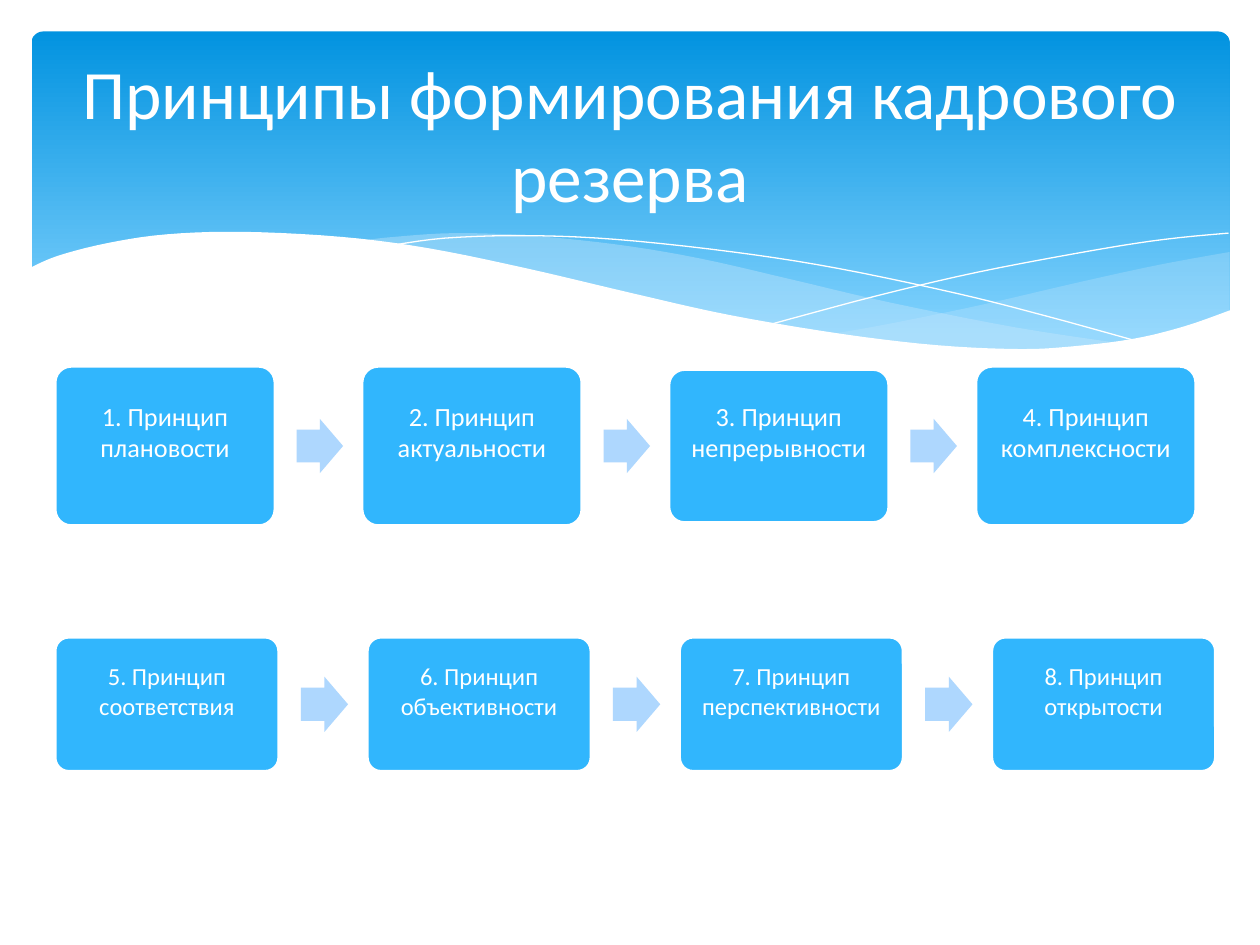
from lxml import etree
from pptx import Presentation
from pptx.dml.color import RGBColor
from pptx.enum.shapes import MSO_SHAPE
from pptx.enum.text import MSO_ANCHOR, PP_ALIGN
from pptx.oxml.ns import qn
from pptx.util import Inches, Pt

ROUNDED, ARROW = MSO_SHAPE.ROUNDED_RECTANGLE, MSO_SHAPE.RIGHT_ARROW
MIDDLE, CENTER = MSO_ANCHOR.MIDDLE, PP_ALIGN.CENTER
FONT = "Calibri"
COLORS = {"white": "FFFFFF", "band_top": "0293E0", "band_bottom": "83D3FE",
          "swell": "C6E7FC", "card": "31B6FD", "arrow": "AED7FE"}
SLIDE_W, SLIDE_H = Inches(10), Inches(7.5)
COL, ROW = SLIDE_W / 100, SLIDE_H / 75

RIGHT_SWELL = [
    [(95.1, 17.5), (89.6, 18.5), (83.6, 19.8), (75.4, 21.7), (68.1, 23.2), (63.6, 24)],
    [(63.6, 24), (68, 24.6), (74.4, 25.2), (79.9, 25.2), (84.7, 24.9), (89.6, 24),
     (92.4, 23.2), (95.1, 22.2)]]
LEFT_SWELL = [
    [(86.8, 24.8), (78.2, 23.5), (68.1, 21.5), (60.4, 19.7), (53, 18), (46.4, 16.9),
     (39.5, 16.2), (33.6, 16), (28.8, 16.3), (26.1, 16.6)],
    [(26.1, 16.6), (33.7, 17.8), (42.4, 19.7), (50.5, 21.5), (57.6, 23), (64, 24.1),
     (71.1, 25), (78.2, 25.3), (83.2, 25.2), (86.8, 24.8)]]
FALLING_THREAD = [
    [(28.4, 17), (32.8, 16.4), (39.1, 16.2), (46.4, 16.5), (55.7, 17.5), (64, 18.8),
     (73.5, 20.8), (80.6, 22.6), (88.2, 24.7)]]
RISING_THREAD = [
    [(58.8, 23.2), (67, 21), (75.1, 19.1), (84.1, 17.4), (89.9, 16.5), (95, 16)]]
WHITE_EDGE = [
    [(95.2, 22.1), (91.5, 23.4), (87.4, 24.4), (82.5, 25), (78.4, 25.2), (71.9, 24.9),
     (64.3, 24), (55.4, 22.5), (47.8, 20.8), (39.3, 18.8), (31.5, 17.2), (24.6, 16.3),
     (16.8, 15.9), (10.7, 16.1), (6, 16.8), (2.1, 17.8), (-0.2, 18.8)],
    [(-0.2, 30.4), (95.2, 30.4)]]


def rgb(name):
    """Look up a palette colour."""
    return RGBColor.from_string(COLORS[name])


def style(shape, fill=None, line=None, width=0, alpha=None):
    """Set the fill, outline and opacity percentage of a shape."""
    shape.shadow.inherit = False
    if fill:
        shape.fill.solid()
        shape.fill.fore_color.rgb = rgb(fill)
    else:
        shape.fill.background()
    if alpha:
        color = shape.fill._xPr.find(qn("a:solidFill"))[0]
        etree.SubElement(color, qn("a:alpha")).set("val", str(alpha * 1000))
    if line:
        shape.line.color.rgb = rgb(line)
        shape.line.width = Pt(width)
    else:
        shape.line.fill.background()


def write(shape, text, size):
    """Write centred white text into a shape."""
    frame = shape.text_frame
    frame.text = text
    frame.word_wrap = True
    frame.vertical_anchor = MIDDLE
    paragraph = frame.paragraphs[0]
    paragraph.alignment = CENTER
    font = paragraph.runs[0].font
    font.name, font.size, font.color.rgb = FONT, Pt(size), rgb("white")


def smooth(knots, steps=5):
    """Return points on a Catmull-Rom curve through the knots."""
    padded = [knots[0], *knots, knots[-1]]
    points = [knots[0]]
    for a, b, c, d in zip(padded, padded[1:], padded[2:], padded[3:]):
        for step in range(1, steps + 1):
            t = step / steps
            points.append(tuple(
                q + t / 2 * (r - p + t * (2 * p - 5 * q + 4 * r - s
                                         + t * (3 * q - p - 3 * r + s)))
                for p, q, r, s in zip(a, b, c, d)))
    return points


def add_wave(slide, left, top, curves, closed=True):
    """Draw joined smooth curves, measured from the banner corner."""
    points = [(round((left + x) * COL), round((top + y) * ROW))
              for curve in curves for x, y in smooth(curve)]
    builder = slide.shapes.build_freeform(*points[0])
    builder.add_line_segments(points[1:], close=closed)
    return builder.convert_to_shape()


def add_banner(slide, left, top, width, height):
    """Draw the gradient banner with its waves."""
    band = slide.shapes.add_shape(ROUNDED, round(left * COL), round(top * ROW),
                                  round(width * COL), round(height * ROW))
    style(band)
    band.adjustments[0] = 0.034
    band.fill.gradient()
    band.fill.gradient_angle = 270
    stops = zip(band.fill.gradient_stops, (0, 0.9), ("band_top", "band_bottom"))
    for stop, position, color in stops:
        stop.position, stop.color.rgb = position, rgb(color)
    for curves, alpha in ((RIGHT_SWELL, 29), (LEFT_SWELL, 40)):
        style(add_wave(slide, left, top, curves), "swell", alpha=alpha)
    for curves in (FALLING_THREAD, RISING_THREAD):
        style(add_wave(slide, left, top, curves, closed=False), line="white")
    style(add_wave(slide, left, top, WHITE_EDGE), "white")


def add_title(slide, left, top, width, height, text):
    """Place the slide title."""
    title = slide.shapes.add_textbox(round(left * COL), round(top * ROW),
                                     round(width * COL), round(height * ROW))
    write(title, text, 39.6)


def add_steps(slide, left, middle, width, heights, labels, size):
    """Draw a row of cards centred on one line, with arrows between them."""
    card_w = width * COL
    arrow_w, arrow_h = card_w * 0.212, card_w * 0.248
    for index, (label, height) in enumerate(zip(labels, heights)):
        x = left * COL + index * card_w * 1.4
        card = slide.shapes.add_shape(ROUNDED, round(x), round((middle - height / 2) * ROW),
                                      round(card_w), round(height * ROW))
        style(card, "card", "white", 1.25)
        card.adjustments[0] = 0.1
        write(card, label, size)
        frame = card.text_frame
        frame.margin_left = frame.margin_right = frame.margin_top = Inches(0.09)
        frame.margin_bottom = Inches(0.09) + Pt(size * 1.1)
        if index < len(labels) - 1:
            arrow = slide.shapes.add_shape(ARROW, round(x + card_w * 1.1),
                                           round(middle * ROW - arrow_h / 2),
                                           round(arrow_w), round(arrow_h))
            style(arrow, "arrow")
            arrow.adjustments[0], arrow.adjustments[1] = 0.6, 0.5


def main():
    """Build the slide and save it."""
    deck = Presentation()
    deck.slide_width, deck.slide_height = SLIDE_W, SLIDE_H
    slide = deck.slides.add_slide(deck.slide_layouts[6])
    add_banner(slide, 2.5, 2.5, 95.1, 27)
    add_title(slide, 5, 3.7, 90, 13.7, "Принципы формирования кадрового резерва")
    add_steps(slide, 4.4, 55.9, 17.7, [10.6] * 4,
              ["5. Принцип соответствия", "6. Принцип объективности",
               "7. Принцип перспективности", "8. Принцип открытости"], 14)
    add_steps(slide, 4.4, 35.4, 17.4, [12.6, 12.6, 12.1, 12.6],
              ["1. Принцип плановости", "2. Принцип актуальности",
               "3. Принцип непрерывности", "4. Принцип комплексности"], 15)
    deck.save("out.pptx")


if __name__ == "__main__":
    main()
